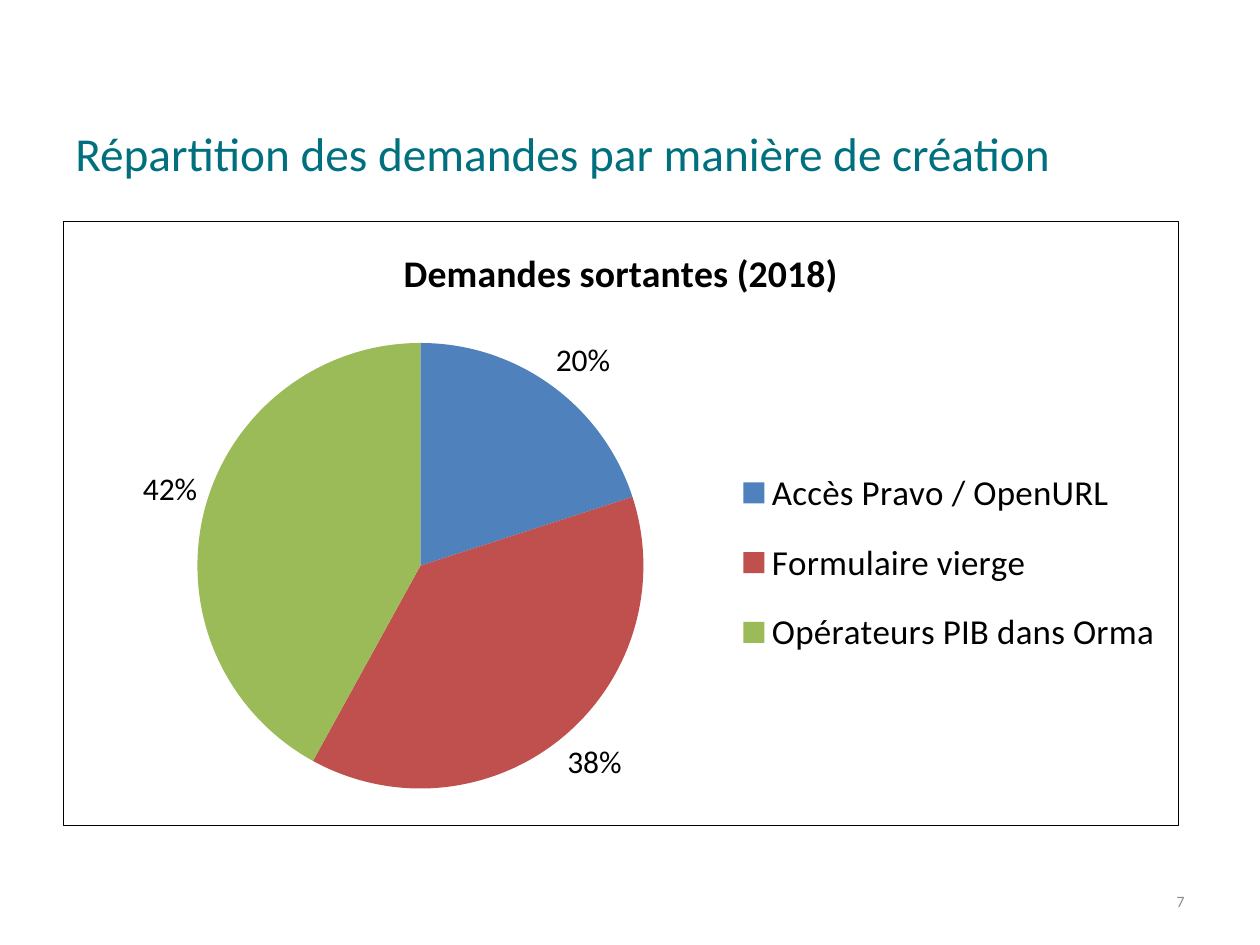
from dataclasses import dataclass

from lxml.etree import SubElement
from pptx import Presentation
from pptx.chart.data import CategoryChartData
from pptx.dml.color import RGBColor
from pptx.enum.chart import XL_CHART_TYPE, XL_LABEL_POSITION, XL_LEGEND_POSITION
from pptx.enum.text import MSO_ANCHOR, PP_ALIGN
from pptx.oxml.ns import qn
from pptx.oxml import parse_xml
from pptx.util import Inches, Pt

FONT = "Calibri"
COLOURS = {
    "title": "00707F",
    "number": "8C8C8C",
    "text": "000000",
    "blue": "4F81BD",
    "red": "C0504D",
    "green": "9BBB59",
}


@dataclass
class Label:
    text: str
    left: float
    top: float
    width: float
    height: float
    size: float
    colour: str
    align: PP_ALIGN


@dataclass
class Share:
    name: str
    percent: int
    colour: str


LABELS = [
    Label("Répartition des demandes par manière de création",
          0.5, 0.87, 9, 0.68, 27, "title", PP_ALIGN.LEFT),
    Label("7", 7.17, 6.95, 2.33, 0.4, 9, "number", PP_ALIGN.RIGHT),
]
SHARES = [
    Share("Accès Pravo / OpenURL", 20, "blue"),
    Share("Formulaire vierge", 38, "red"),
    Share("Opérateurs PIB dans Orma", 42, "green"),
]


def colour(name: str) -> RGBColor:
    return RGBColor.from_string(COLOURS[name])


def style_font(font, size: float, name: str, bold: bool = False) -> None:
    font.name = FONT
    font.size = Pt(size)
    font.bold = bold
    font.color.rgb = colour(name)


def add_label(page, label: Label) -> None:
    box = page.shapes.add_textbox(Inches(label.left), Inches(label.top),
                                  Inches(label.width), Inches(label.height))
    frame = box.text_frame
    frame.word_wrap = True
    frame.vertical_anchor = MSO_ANCHOR.MIDDLE
    para = frame.paragraphs[0]
    para.alignment = label.align
    span = para.add_run()
    span.text = label.text
    style_font(span.font, label.size, label.colour)


def place(parent, before: str, inner: bool, **fractions: float) -> None:
    """Place a chart part by fractions of the chart area."""
    for old in parent.findall(qn("c:layout")):
        parent.remove(old)
    layout = parent.makeelement(qn("c:layout"))
    manual = SubElement(layout, qn("c:manualLayout"))
    if inner:
        SubElement(manual, qn("c:layoutTarget")).set("val", "inner")
    for mode in ("xMode", "yMode"):
        SubElement(manual, qn(f"c:{mode}")).set("val", "edge")
    for key, value in fractions.items():
        SubElement(manual, qn(f"c:{key}")).set("val", str(value))
    parent.find(qn(before)).addprevious(layout)


def add_border(chart) -> None:
    border = parse_xml(
        '<c:spPr xmlns:c="http://schemas.openxmlformats.org/drawingml/2006/chart" '
        'xmlns:a="http://schemas.openxmlformats.org/drawingml/2006/main">'
        f'<a:noFill/><a:ln w="{Pt(0.75)}"><a:solidFill>'
        f'<a:srgbClr val="{COLOURS["text"]}"/></a:solidFill></a:ln></c:spPr>')
    chart.element.find(qn("c:chart")).addnext(border)


def add_pie(page, shares: list[Share]) -> None:
    data = CategoryChartData()
    data.categories = [share.name for share in shares]
    data.add_series("Demandes", [share.percent for share in shares])
    chart = page.shapes.add_chart(XL_CHART_TYPE.PIE, Inches(0.5), Inches(1.75),
                                  Inches(8.86), Inches(4.81), data).chart
    style_font(chart.font, 18, "text")
    add_border(chart)

    # Title
    chart.has_title = True
    span = chart.chart_title.text_frame.paragraphs[0].add_run()
    span.text = "Demandes sortantes (2018)"
    style_font(span.font, 21.6, "text", bold=True)

    # Legend
    chart.has_legend = True
    legend = chart.legend
    legend.position = XL_LEGEND_POSITION.RIGHT
    legend.include_in_layout = False
    style_font(legend.font, 20, "text")
    place(legend._element, "c:overlay", False, x=0.62, y=0.37, w=0.37, h=0.39)

    # Slices and percentages
    plot = chart.plots[0]
    plot.vary_by_categories = True
    place(chart.element.find(".//" + qn("c:plotArea")), "c:pieChart", True,
          x=0.12, y=0.2, w=0.4, h=0.74)
    for index, share in enumerate(shares):
        fill = plot.series[0].points[index].format.fill
        fill.solid()
        fill.fore_color.rgb = colour(share.colour)
    plot.has_data_labels = True
    labels = plot.data_labels
    labels.show_percentage = True
    labels.show_value = False
    labels.number_format = "0%"
    labels.number_format_is_linked = False
    labels.position = XL_LABEL_POSITION.OUTSIDE_END
    style_font(labels.font, 18, "text")


def main() -> None:
    deck = Presentation()
    deck.slide_width, deck.slide_height = Inches(10), Inches(7.5)
    page = deck.slides.add_slide(deck.slide_layouts[6])
    for label in LABELS:
        add_label(page, label)
    add_pie(page, SHARES)
    deck.save("out.pptx")


if __name__ == "__main__":
    main()
